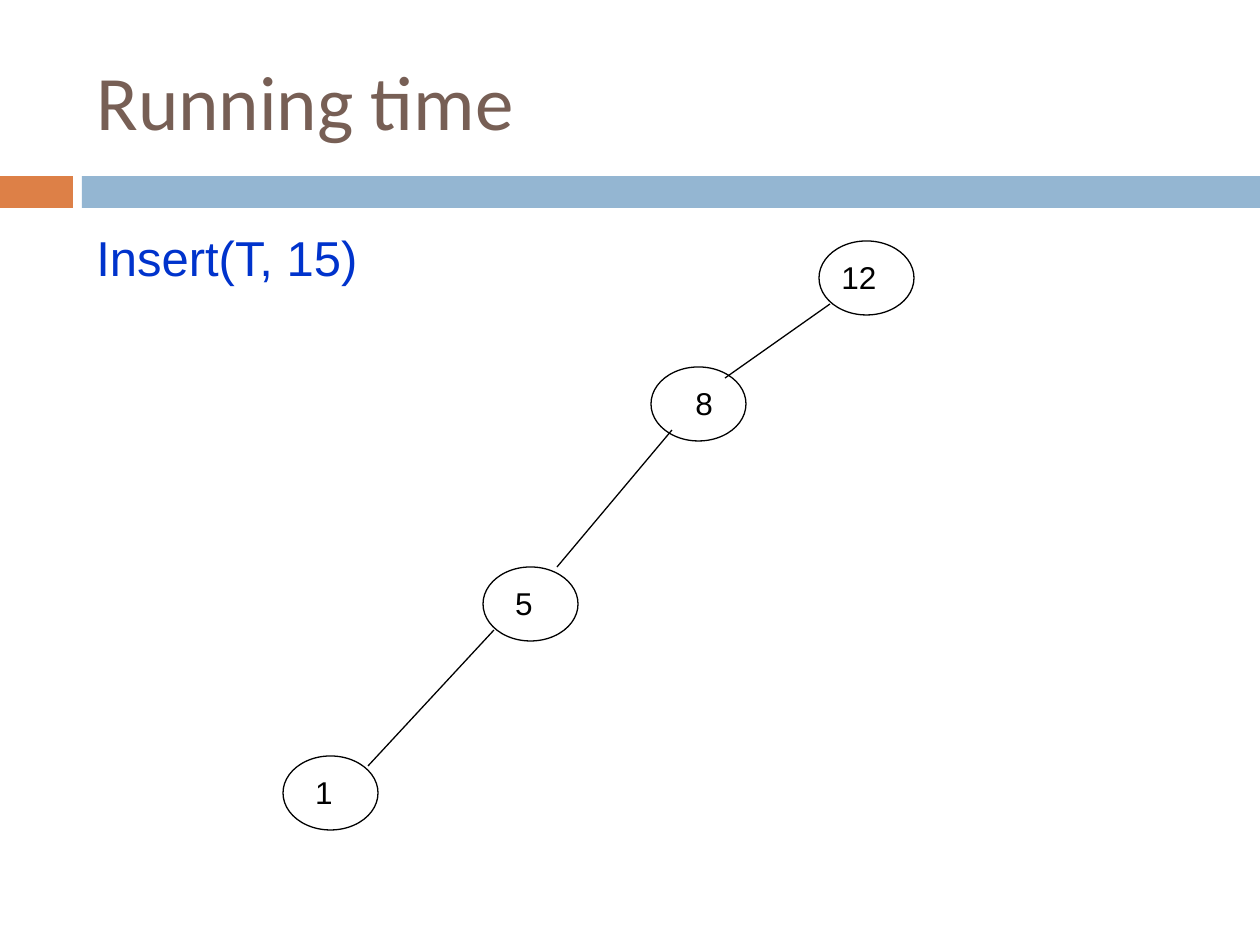
from lxml import etree
from pptx import Presentation
from pptx.dml.color import RGBColor
from pptx.enum.shapes import MSO_CONNECTOR, MSO_SHAPE
from pptx.enum.text import MSO_ANCHOR
from pptx.oxml.ns import qn
from pptx.util import Emu, Pt

BLACK = "000000"
NODES = [("12", 819, 241, 10), ("8", 651, 367, 32), (" 5", 483, 567, 11), (" 1", 283, 756, 11)]
EDGES = [(725, 378, 830, 304), (557, 567, 672, 430), (368, 766, 494, 630)]


def px(n):
    return Emu(round(n * 914400 / 126))


def color(value):
    return RGBColor.from_string(value)


def add_bar(s, x, w, fill):
    sp = s.shapes.add_shape(MSO_SHAPE.RECTANGLE, px(x), px(176), px(w), px(32))
    sp.shadow.inherit = False
    sp.fill.solid()
    sp.fill.fore_color.rgb = color(fill)
    sp.line.fill.background()


def add_text(s, text, x, y, w, h, size, font="Arial", fill=BLACK, anchor=MSO_ANCHOR.TOP):
    tf = s.shapes.add_textbox(px(x), px(y), px(w), px(h)).text_frame
    tf.word_wrap = True
    tf.vertical_anchor = anchor
    p = tf.paragraphs[0]
    p.text = text
    p.font.name = font
    p.font.size = Pt(size)
    p.font.color.rgb = color(fill)


def add_node(s, key, x, y, indent):
    add_text(s, key, x + indent, y + 11, 84, 50, 18)
    sp = s.shapes.add_shape(MSO_SHAPE.OVAL, px(x), px(y), px(95), px(74))
    sp.shadow.inherit = False
    sp.fill.background()
    sp.line.color.rgb = color(BLACK)
    sp.line.width = Pt(0.75)


def add_edge(s, x1, y1, x2, y2):
    line = s.shapes.add_connector(MSO_CONNECTOR.STRAIGHT, px(x1), px(y1), px(x2), px(y2))
    line.line.color.rgb = color(BLACK)
    line.line.width = Pt(0.75)
    etree.SubElement(line._element.spPr, qn("a:effectLst"))


def main():
    prs = Presentation()
    prs.slide_width, prs.slide_height = px(1260), px(945)
    s = prs.slides.add_slide(prs.slide_layouts[6])
    add_bar(s, 0, 73, "DD8047")
    add_bar(s, 82, 1178, "94B6D2")
    add_text(s, "Running time", 84, 32, 1208 - 84, 136, 44, "Calibri", "775F55", MSO_ANCHOR.MIDDLE)
    for node in NODES:
        add_node(s, *node)
    for edge in EDGES:
        add_edge(s, *edge)
    add_text(s, "Insert(T, 15)", 84, 221, 399, 72, 28, fill="0033CC")
    prs.save("out.pptx")


if __name__ == "__main__":
    main()
